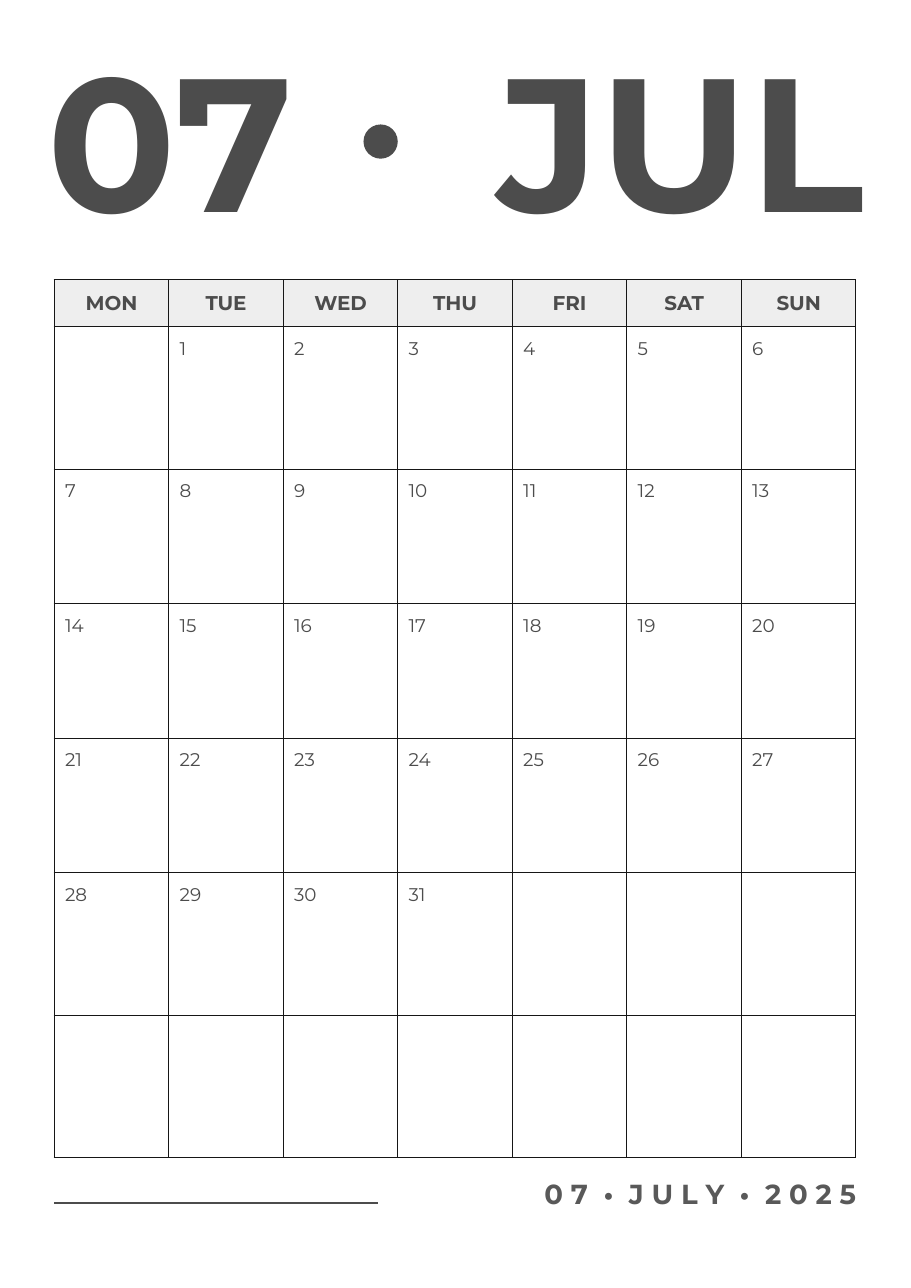
"""Build a one-page monthly calendar for July 2025."""
from lxml.etree import SubElement
from pptx import Presentation
from pptx.dml.color import RGBColor as Rgb
from pptx.enum.shapes import MSO_CONNECTOR as Connector, MSO_SHAPE as Preset
from pptx.enum.text import MSO_ANCHOR as Anchor, PP_ALIGN as Align
from pptx.oxml.ns import qn
from pptx.util import Cm, Pt

WEEKDAYS = ["MON", "TUE", "WED", "THU", "FRI", "SAT", "SUN"]
FIRST_COLUMN, LAST_DAY = 1, 31
DATE_HEIGHTS = [1.21, 1.02, 1.02, 1.02, 1.21, 1.21]
HEADER_HEIGHT, NOTE_HEIGHT, DAY_WIDTH = 1.08, 2.08, 2.64
TABLE_LEFT, TABLE_TOP = 1.25, 6.45
COLORS = {"ink": "4C4C4C", "footer": "595959", "header": "EEEEEE", "grid": "161616"}
FORMATS = {
    "title": {"size": Pt(124), "bold": True},
    "footer": {"size": Pt(18), "bold": True},
    "weekday": {"size": Pt(13), "bold": True},
    "date": {"size": Pt(12), "bold": False},
}
TEXTS = [
    ("07", (1.09, 0.53, 6.83, 5.31), "title", "ink", Align.LEFT),
    ("JUL", (8.89, 0.53, 11.02, 5.31), "title", "ink", Align.RIGHT),
    ("0 7  •  J U L Y  •  2 0 2 5", (9.63, 27.15, 10.11, 0.76), "footer", "footer", Align.RIGHT),
]
DOT = (8.38, 2.87, 0.79, 0.79)
NOTE_LINE = (1.25, 27.74, 8.71, 27.74)
MARGINS = ("margin_left", "margin_top", "margin_right", "margin_bottom")


def lengths(values):
    return [Cm(value) for value in values]


def set_margins(target, size):
    for margin in MARGINS:
        setattr(target, margin, size)


def write(frame, text, style, color, align):
    para = frame.paragraphs[0]
    para.alignment = align
    span = para.add_run()
    span.text = text
    for name, value in {"name": "Montserrat", **FORMATS[style]}.items():
        setattr(span.font, name, value)
    span.font.color.rgb = Rgb.from_string(COLORS[color])


def add_text(page, text, place, style, color, align):
    box = page.shapes.add_textbox(*lengths(place))
    box.text_frame.word_wrap = True
    set_margins(box.text_frame, 0)
    write(box.text_frame, text, style, color, align)


def set_borders(cell, sides):
    properties = cell._tc.get_or_add_tcPr()
    for side in "LRTB":
        edge = SubElement(properties, qn(f"a:ln{side}"), w=str(Pt(0.75)))
        if side in sides:
            fill = SubElement(edge, qn("a:solidFill"))
            SubElement(fill, qn("a:srgbClr"), val=COLORS["grid"])
        else:
            SubElement(edge, qn("a:noFill"))


def add_calendar(page):
    heights = [HEADER_HEIGHT]
    for date_height in DATE_HEIGHTS:
        heights += [date_height, NOTE_HEIGHT]
    size = (DAY_WIDTH * len(WEEKDAYS), sum(heights))
    table = page.shapes.add_table(
        len(heights), len(WEEKDAYS), *lengths((TABLE_LEFT, TABLE_TOP, *size))
    ).table
    table.first_row = table.horz_banding = False
    for column in table.columns:
        column.width = Cm(DAY_WIDTH)
    for row, height in enumerate(heights):
        table.rows[row].height = Cm(height)
        for column, weekday in enumerate(WEEKDAYS):
            cell = table.cell(row, column)
            is_date = row % 2 == 1
            set_borders(cell, "LRTB" if row == 0 else "LRT" if is_date else "LRB")
            if row == 0:
                cell.fill.solid()
                cell.fill.fore_color.rgb = Rgb.from_string(COLORS["header"])
                cell.vertical_anchor = Anchor.MIDDLE
                set_margins(cell, 0)
                write(cell.text_frame, weekday, "weekday", "ink", Align.CENTER)
                continue
            cell.fill.background()
            day = row // 2 * len(WEEKDAYS) + column - FIRST_COLUMN + 1
            if is_date and 1 <= day <= LAST_DAY:
                set_margins(cell, Cm(0.25))
                write(cell.text_frame, str(day), "date", "ink", Align.LEFT)


def main():
    deck = Presentation()
    deck.slide_width, deck.slide_height = Cm(21), Cm(29.7)
    page = deck.slides.add_slide(deck.slide_layouts[6])
    add_calendar(page)
    line = page.shapes.add_connector(Connector.STRAIGHT, *lengths(NOTE_LINE))
    line.line.width = Pt(0.75)
    line.line.color.rgb = Rgb.from_string(COLORS["ink"])
    SubElement(line._element.spPr, qn("a:effectLst"))
    for entry in TEXTS:
        add_text(page, *entry)
    dot = page.shapes.add_shape(Preset.OVAL, *lengths(DOT))
    dot.shadow.inherit = False
    dot.fill.solid()
    dot.fill.fore_color.rgb = Rgb.from_string(COLORS["ink"])
    dot.line.fill.background()
    deck.save("out.pptx")


if __name__ == "__main__":
    main()
